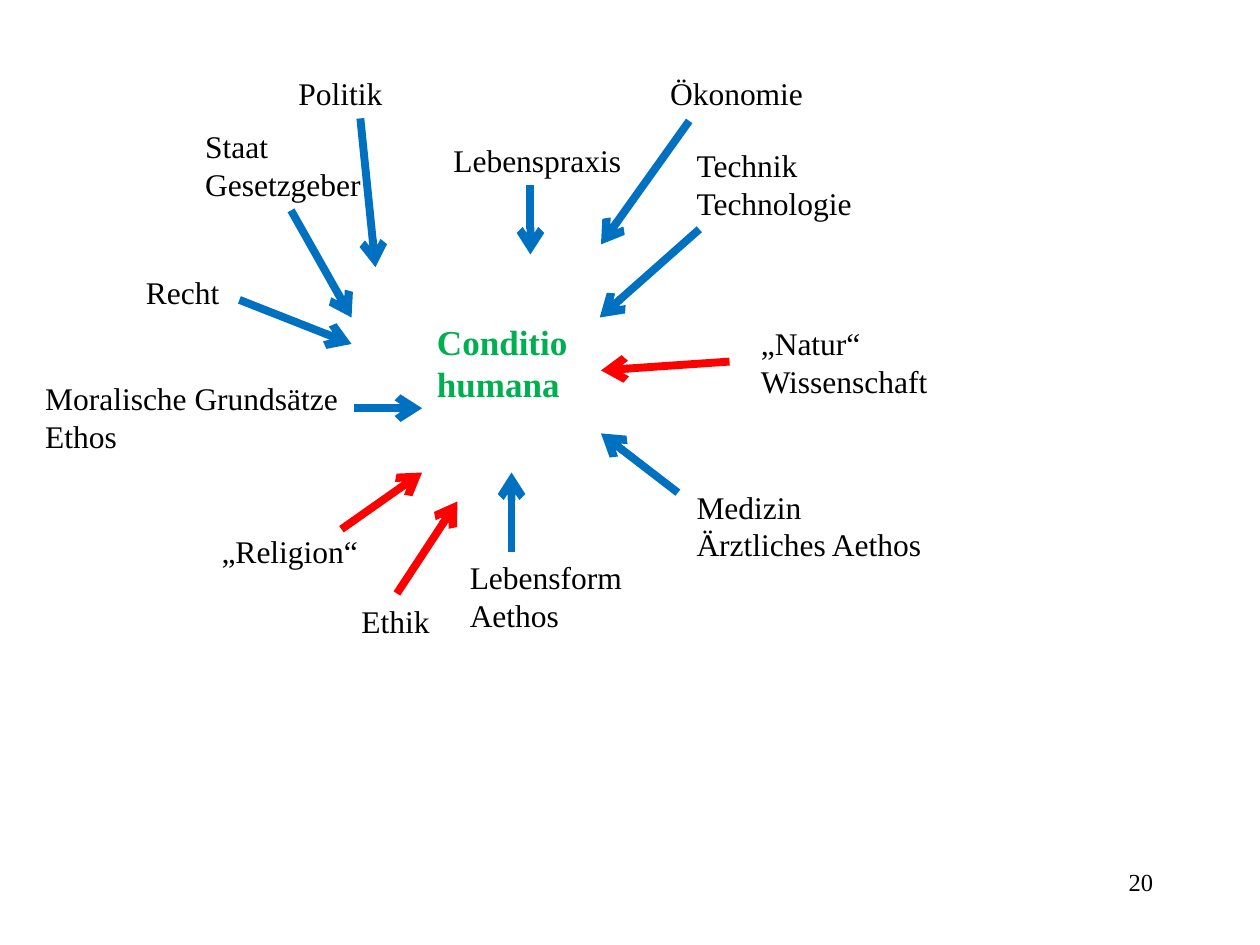
from lxml.etree import SubElement
from pptx import Presentation
from pptx.dml.color import RGBColor
from pptx.enum.shapes import MSO_CONNECTOR as Connector, MSO_SHAPE as Shape
from pptx.enum.text import MSO_ANCHOR as Anchor, MSO_AUTO_SIZE as AutoSize, PP_ALIGN as Align
from pptx.oxml.ns import qn
from pptx.util import Inches, Pt

# The slide is a grid of 100 columns by 75 rows; all positions count in its cells.
CELL = Inches(0.1)
COLUMNS, ROWS = 100, 75
ONE_LINE, TWO_LINES = 4, 7.1

COLORS = {
    "label": "000000",
    "influence": "0070C0",
    "belief": "FF0000",
    "centre": "00B050",
    "paper": "FFFFFF",
}
LABEL_FONT = {"name": "Times New Roman", "size": Pt(18)}
CENTRE_FONT = {**LABEL_FONT, "size": Pt(20), "bold": True}
NUMBER_FONT = {**LABEL_FONT, "size": Pt(14)}

# lines of the label, (left, top, width), arrow start, arrow end, kind of arrow
THEMES = [
    (["Lebenspraxis"], (35, 10.7, 15.5), (42.1, 14.7), (42.1, 20.2), "influence"),
    (["Staat", "Gesetzgeber"], (15.3, 9.6, 14.5), (23.1, 16.7), (27.9, 25.2), "influence"),
    (["Moralische Grundsätze", "Ethos"], (2.6, 29.6, 25.5), (28.1, 32.4), (33.5, 32.4), "influence"),
    (["Recht"], (10.6, 21.2, 7.9), (19, 23.8), (27.9, 27.3), "influence"),
    (["Lebensform", "Aethos"], (36.3, 43.8, 14.2), (40.6, 43.8), (40.6, 37.5), "influence"),
    (["„Natur“", "Wissenschaft"], (59.4, 25.2, 15.4), (57.9, 28.7), (47.7, 29.4), "belief"),
    (["Politik"], (22.7, 5.4, 8.8), (28.6, 9.4), (29.8, 21.2), "influence"),
    (["Medizin", "Ärztliches Aethos"], (54.3, 38.2, 20), (53.8, 39.1), (47.7, 34.4), "influence"),
    (["Technik", "Technologie"], (54.3, 11.1, 14.5), (55.5, 18.2), (47.6, 25.2), "influence"),
    (["„Religion“"], (16.6, 41.7, 12.9), (27.1, 42), (33.5, 37.5), "belief"),
    (["Ethik"], (27.7, 47.3, 7.5), (31.5, 47.1), (36.3, 39.8), "belief"),
    (["Ökonomie"], (52.2, 5.4, 12.7), (54.7, 9.6), (47.7, 19.4), "influence"),
]


def cells(*counts):
    return [round(count * CELL) for count in counts]


def rgb(role):
    return RGBColor.from_string(COLORS[role])


def write_lines(frame, lines, font, color, align=Align.LEFT):
    """Fill a text frame with one paragraph per line."""
    frame.word_wrap = False
    frame.auto_size = AutoSize.NONE
    for index, line in enumerate(lines):
        paragraph = frame.add_paragraph() if index else frame.paragraphs[0]
        paragraph.alignment = align
        run = paragraph.add_run()
        run.text = line
        for attribute, value in font.items():
            setattr(run.font, attribute, value)
        run.font.color.rgb = rgb(color)


def add_label(slide, lines, box, font=LABEL_FONT, align=Align.LEFT):
    label = slide.shapes.add_textbox(*cells(*box))
    write_lines(label.text_frame, lines, font, "label", align)


def add_arrow(slide, start, end, kind):
    arrow = slide.shapes.add_connector(Connector.STRAIGHT, *cells(*start, *end))
    arrow.line.color.rgb = rgb(kind)
    arrow.line.width = Pt(4.5)
    SubElement(arrow.line._get_or_add_ln(), qn("a:tailEnd"), type="arrow")
    SubElement(arrow._element.spPr, qn("a:effectLst"))


def add_centre(slide, lines, box):
    centre = slide.shapes.add_shape(Shape.RECTANGLE, *cells(*box))
    centre.shadow.inherit = False
    centre.fill.background()
    centre.line.color.rgb = rgb("paper")
    centre.line.width = Pt(0.75)
    centre.text_frame.vertical_anchor = Anchor.MIDDLE
    write_lines(centre.text_frame, lines, CENTRE_FONT, "centre")


def main():
    deck = Presentation()
    deck.slide_width, deck.slide_height = cells(COLUMNS, ROWS)
    slide = deck.slides.add_slide(deck.slide_layouts[6])
    for lines, (left, top, width), start, end, kind in THEMES:
        height = TWO_LINES if len(lines) == 2 else ONE_LINE
        add_label(slide, lines, (left, top, width, height))
        add_arrow(slide, start, end, kind)
    add_centre(slide, ["Conditio", "humana"], (33.7, 24.9, 12.4, 7.7))
    add_label(slide, ["20"], (71.7, 68.3, 20.8, 5), NUMBER_FONT, Align.RIGHT)
    deck.save("out.pptx")


if __name__ == "__main__":
    main()
